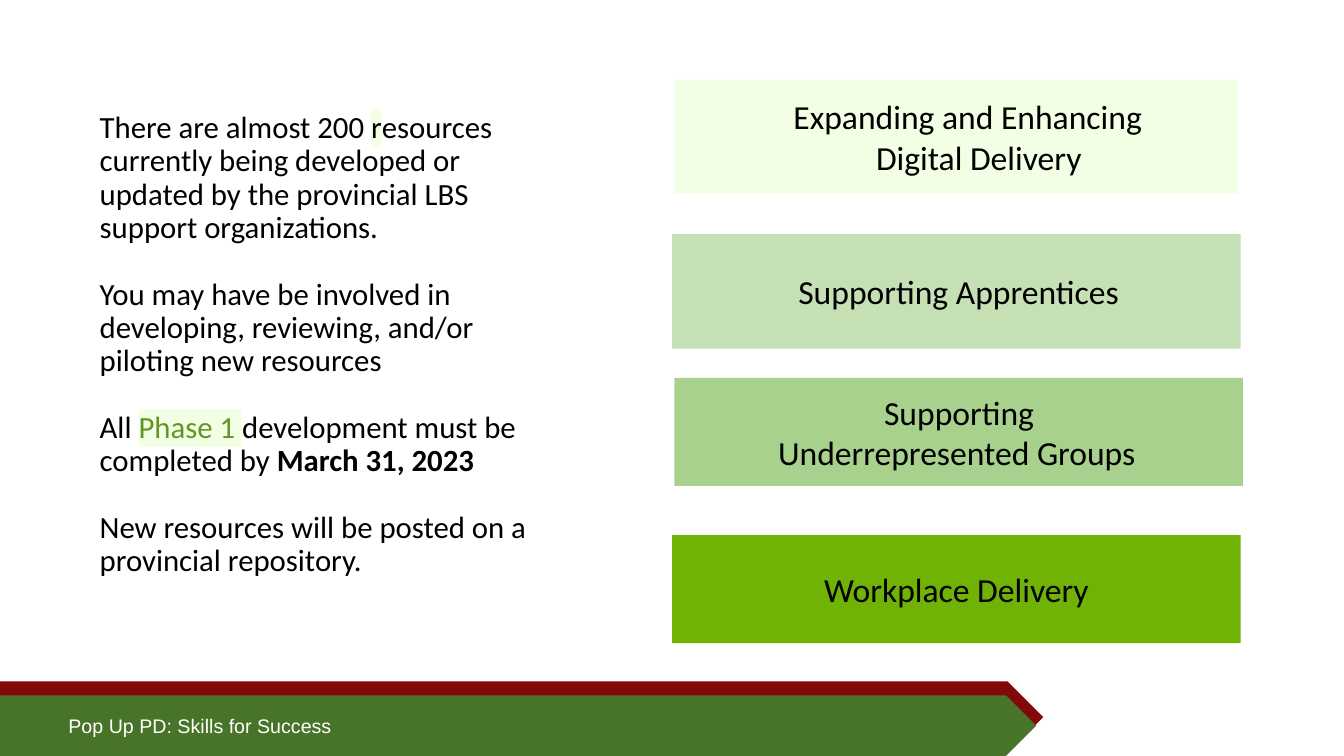
from lxml.etree import SubElement
from pptx import Presentation
from pptx.dml.color import RGBColor
from pptx.enum.shapes import MSO_SHAPE
from pptx.enum.text import MSO_ANCHOR, PP_ALIGN
from pptx.oxml.ns import qn
from pptx.util import Inches, Pt

COLORS = {
    "black": "000000",
    "white": "FFFFFF",
    "red": "82080A",
    "forest": "487429",
    "leaf": "629622",
    "mint": "F3FFE5",
    "pale": "C5E0B4",
    "soft": "A9D18E",
    "vivid": "71B305",
}


class Deck:
    def __init__(self):
        self.file = Presentation()
        self.file.slide_width = Inches(13.33)
        self.file.slide_height = Inches(7.5)
        self.slide = self.file.slides.add_slide(self.file.slide_layouts[6])
        self.body = {"name": "Calibri", "size": Pt(22), "bold": False}
        self.label = {"name": "Calibri", "size": Pt(24)}
        self.foot = {"name": "Arial", "size": Pt(14)}

    def wide(self, share):
        return int(self.file.slide_width * share / 100)

    def high(self, share):
        return int(self.file.slide_height * share / 100)

    def place(self, box):
        left, top, width, height = box
        return self.wide(left), self.high(top), self.wide(width), self.high(height)

    def shape(self, kind, box, color):
        shape = self.slide.shapes.add_shape(kind, *self.place(box))
        shape.shadow.inherit = False
        shape.fill.solid()
        shape.fill.fore_color.rgb = RGBColor.from_string(COLORS[color])
        shape.line.fill.background()
        return shape

    def run(self, para, text, style, color="black", mark=None, **extra):
        run = para.add_run()
        run.text = text
        for key, value in {**style, **extra}.items():
            setattr(run.font, key, value)
        run.font.color.rgb = RGBColor.from_string(COLORS[color])
        if mark:
            props = run.font._element
            light = SubElement(props, qn("a:highlight"))
            SubElement(light, qn("a:srgbClr"), val=COLORS[mark])
            props.find(qn("a:solidFill")).addnext(light)

    def paras(self, frame, count):
        return [frame.paragraphs[0]] + [frame.add_paragraph() for _ in range(count - 1)]

    def text(self, box, blocks, style, anchor, **form):
        frame = self.slide.shapes.add_textbox(*self.place(box)).text_frame
        frame.word_wrap = True
        frame.vertical_anchor = anchor
        for row, (para, runs) in enumerate(zip(self.paras(frame, len(blocks)), blocks)):
            for key, value in form.items():
                if row or key != "space_before":
                    setattr(para, key, value)
            for text, extra in runs:
                self.run(para, text, style, **extra)

    def card(self, box, color, lines):
        frame = self.shape(MSO_SHAPE.RECTANGLE, box, color).text_frame
        for key in ("margin_left", "margin_right"):
            setattr(frame, key, 0)
        frame.word_wrap = True
        frame.vertical_anchor = MSO_ANCHOR.MIDDLE
        for para, (text, indent) in zip(self.paras(frame, len(lines)), lines):
            para.alignment = PP_ALIGN.LEFT if indent else PP_ALIGN.CENTER
            if indent:
                para._p.get_or_add_pPr().set("marL", str(self.wide(indent)))
            self.run(para, text, self.label)


STORY = [
    [
        ("There are almost 200 ", {}),
        ("r", {"mark": "mint"}),
        ("esources currently being developed or updated by the provincial LBS support organizations.", {}),
    ],
    [("You may have be involved in developing, reviewing, and/or piloting new resources", {})],
    [
        ("All ", {}),
        ("Phase 1 ", {"color": "leaf", "mark": "mint"}),
        ("development must be completed by ", {}),
        ("March 31, 2023", {"bold": True}),
    ],
    [("New resources will be posted on a provincial repository.", {})],
]

CARDS = [
    ((50.18, 10.53, 41.92, 15.07), "mint",
     [("Expanding and Enhancing", 8.85), ("Digital Delivery", 15)]),
    ((50.02, 30.93, 42.3, 15.2), "pale", [("Supporting Apprentices", 9.38)]),
    ((50.18, 50, 42.3, 14.27), "soft",
     [("Supporting", 15.6), ("Underrepresented Groups", 7.72)]),
    ((50.02, 70.8, 42.3, 14.27), "vivid", [("Workplace Delivery", 0)]),
]


def main():
    deck = Deck()
    deck.shape(MSO_SHAPE.PENTAGON, (0, 90.13, 77.62, 9.47), "red")
    deck.shape(MSO_SHAPE.PENTAGON, (0, 92, 77.1, 8), "forest")
    deck.text((4.35, 93.73, 52.28, 4.53),
              [[("Pop Up PD: Skills for Success", {"color": "white"})]],
              deck.foot, MSO_ANCHOR.TOP)
    deck.text((6.68, 11.2, 34.5, 68.93), STORY, deck.body, MSO_ANCHOR.MIDDLE,
              line_spacing=0.9, space_before=Pt(24))
    for card in CARDS:
        deck.card(*card)
    deck.file.save("out.pptx")


if __name__ == "__main__":
    main()
